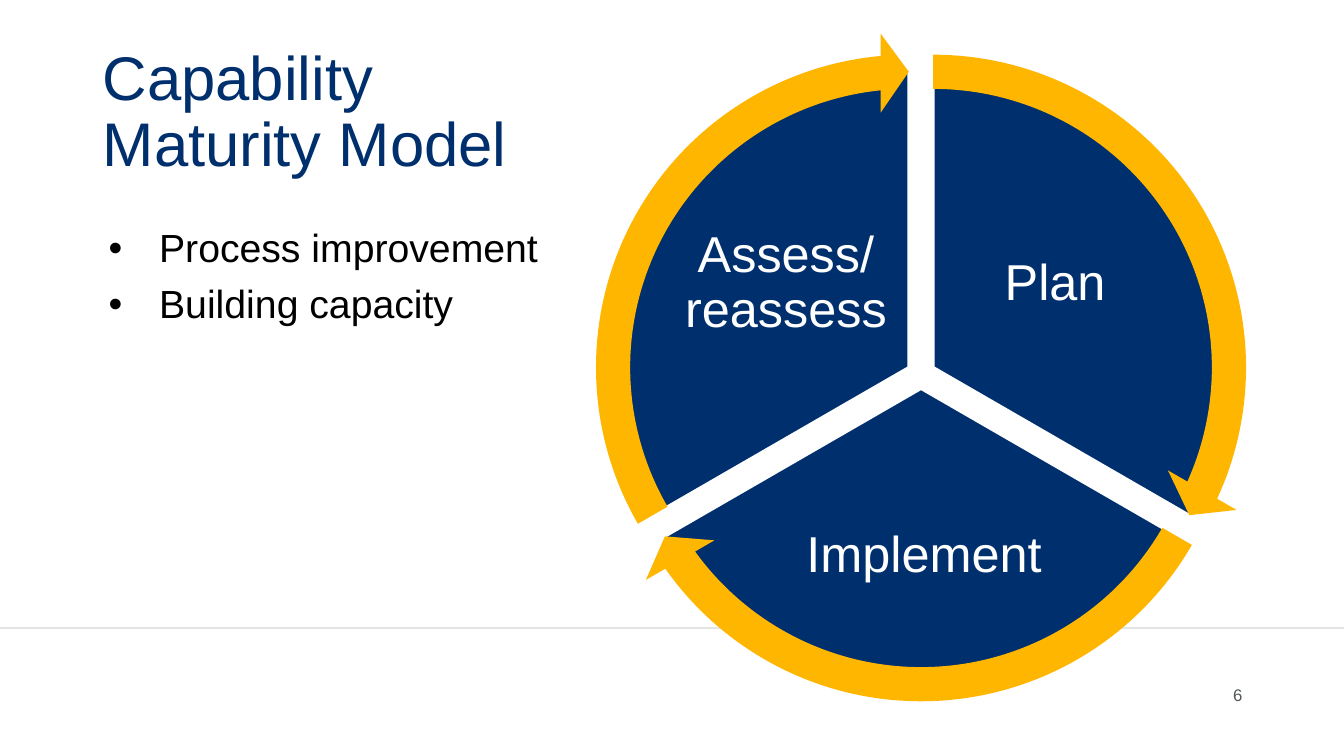
import math

from lxml import etree
from pptx import Presentation
from pptx import util as u
from pptx.dml.color import RGBColor
from pptx.enum import shapes, text
from pptx.oxml.ns import qn

NAVY, GOLD, WHITE = "002F6D", "FFB600", "FFFFFF"
ANGLE_UNIT = 0.6


def color(value):
    return RGBColor.from_string(value)


def apply(target, values):
    for name, value in values.items():
        setattr(target, name, value)


def add_text(slide, box, lines, size, hex_color, paragraph_format, anchor, inset=0.1):
    frame = slide.shapes.add_textbox(*map(u.Inches, box)).text_frame
    apply(frame, {
        "word_wrap": True,
        "vertical_anchor": anchor,
        "margin_left": u.Inches(inset),
        "margin_right": u.Inches(inset),
        "margin_top": u.Inches(0.05),
        "margin_bottom": u.Inches(0.05),
    })
    for index, line in enumerate(lines):
        paragraph = frame.add_paragraph() if index else frame.paragraphs[0]
        paragraph.text = line
        apply(paragraph, paragraph_format)
        for run in paragraph.runs:
            apply(run.font, {"name": "Arial", "size": u.Pt(size)})
            run.font.color.rgb = color(hex_color)
    return frame


def add_divider(slide, top, width):
    line = slide.shapes.add_connector(
        shapes.MSO_CONNECTOR.STRAIGHT, 0, u.Inches(top), u.Inches(width), u.Inches(top))
    line.line.color.rgb = color("E3E5E5")
    line.line.width = u.Pt(1)
    etree.SubElement(line._element.spPr, qn("a:effectLst"))


def add_bullets(slide, box, items):
    frame = add_text(slide, box, items, 28, "000000", {"line_spacing": 0.9},
                     text.MSO_ANCHOR.TOP)
    for index, paragraph in enumerate(frame.paragraphs):
        if index:
            paragraph.space_before = u.Pt(10)
        properties = paragraph._p.get_or_add_pPr()
        properties.set("marL", str(u.Inches(0.56)))
        properties.set("indent", str(u.Inches(-0.5)))
        bullet_color = etree.SubElement(properties, qn("a:buClr"))
        etree.SubElement(bullet_color, qn("a:srgbClr")).set("val", "000000")
        etree.SubElement(properties, qn("a:buFont")).set("typeface", "Arial")
        etree.SubElement(properties, qn("a:buChar")).set("char", "•")


def add_round_shape(slide, kind, center, diameter, adjustments, fill):
    left, top = (value - diameter / 2 for value in center)
    shape = slide.shapes.add_shape(kind, *map(u.Inches, (left, top, diameter, diameter)))
    for index, value in enumerate(adjustments):
        shape.adjustments[index] = value
    shape.shadow.inherit = False
    shape.fill.solid()
    shape.fill.fore_color.rgb = color(fill)
    shape.line.fill.background()
    return shape


def add_cycle(slide, box, stages):
    left, top, width, height = box
    center_x, center_y = left + width / 2, top + height / 2
    sectors = []
    for index in range(len(stages)):
        start = (270 + 120 * index) % 360
        middle = math.radians(start + 60)
        center = (center_x + 0.14 * math.cos(middle), center_y + 0.14 * math.sin(middle))
        sectors.append((center, start * ANGLE_UNIT, (start + 120) % 360 * ANGLE_UNIT))

    for (center, start, end), (label, offset, size) in zip(sectors, stages):
        pie = add_round_shape(slide, shapes.MSO_SHAPE.PIE, center, 5.92, (start, end), NAVY)
        pie.line.color.rgb = color(WHITE)
        pie.line.width = u.Pt(2)
        label_box = (center_x + offset[0] - size[0] / 2,
                     center_y + offset[1] - size[1] / 2, *size)
        add_text(slide, label_box, [label], 36, WHITE,
                 {"alignment": text.PP_ALIGN.CENTER, "line_spacing": 0.9},
                 text.MSO_ANCHOR.MIDDLE, 0.05)

    head = 3.28
    for center, start, end in sectors:
        add_round_shape(slide, shapes.MSO_SHAPE.CIRCULAR_ARROW, center, 6.65,
                        (0.051, head, end - head, start, 0.059), GOLD)


def build_slide(presentation):
    slide = presentation.slides.add_slide(presentation.slide_layouts[6])
    add_divider(slide, 6.23, 13.33)
    add_text(slide, (0.92, 0.4, 4.31, 1.45), ["Capability Maturity Model"], 44, NAVY,
             {"line_spacing": 0.9}, text.MSO_ANCHOR.MIDDLE)
    add_bullets(slide, (0.92, 2.22, 5.08, 3.77),
                ["Process improvement", "Building capacity"])
    add_text(slide, (9.42, 6.69, 3, 0.4), ["6"], 12, "53575A",
             {"alignment": text.PP_ALIGN.RIGHT}, text.MSO_ANCHOR.MIDDLE)
    add_cycle(slide, (5.69, 0.27, 6.89, 6.89), [
        ("Plan", (1.33, -0.9), (2.11, 1.76)),
        ("Implement", (0.03, 1.8), (3.17, 1.55)),
        ("Assess/\vreassess", (-1.34, -0.9), (2.11, 1.76)),
    ])


def main():
    presentation = Presentation()
    apply(presentation, {"slide_width": u.Inches(13.33), "slide_height": u.Inches(7.5)})
    build_slide(presentation)
    presentation.save("out.pptx")


if __name__ == "__main__":
    main()
